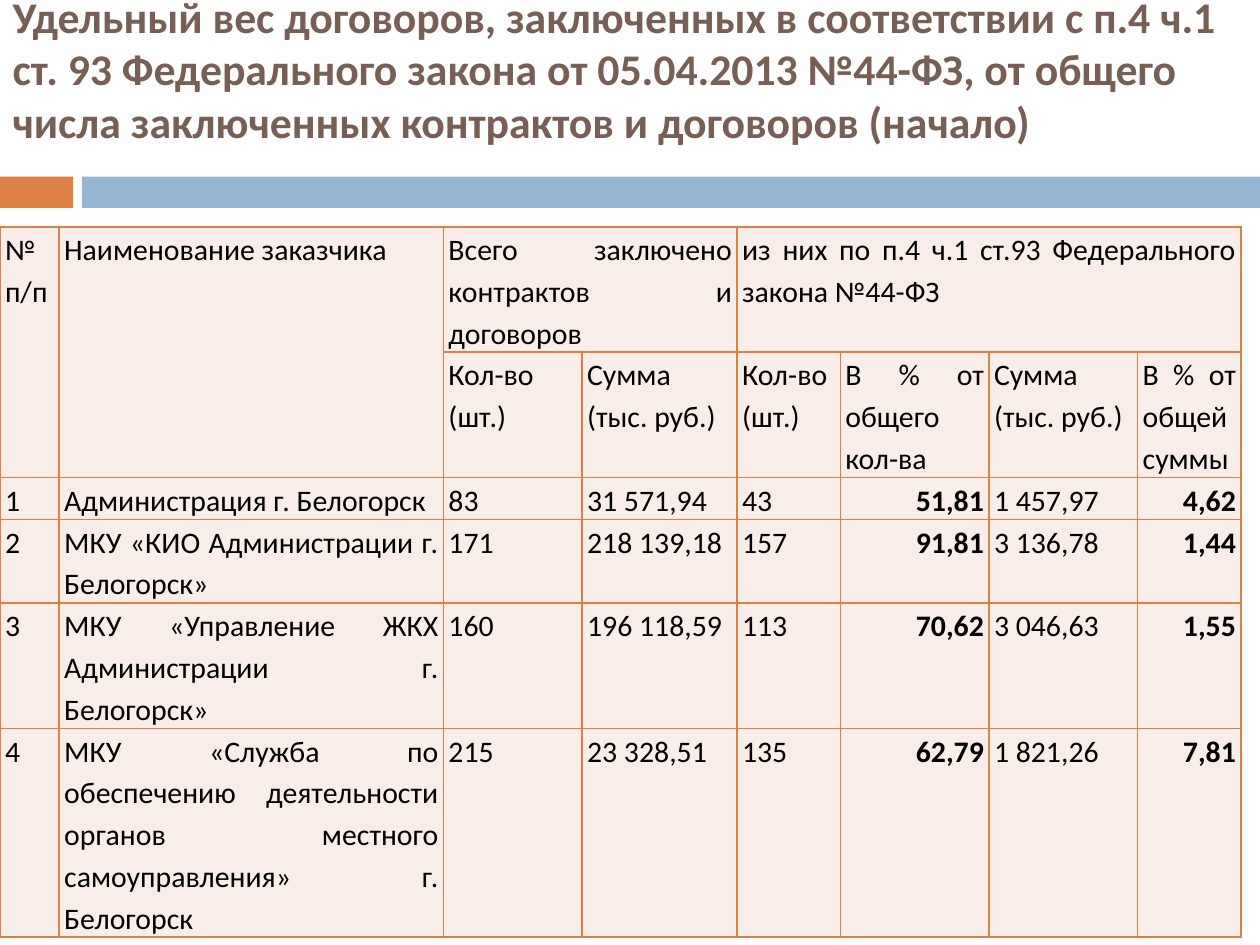
from lxml import etree
from pptx import Presentation
from pptx.dml.color import RGBColor
from pptx.enum.shapes import MSO_SHAPE
from pptx.enum.text import MSO_ANCHOR, MSO_AUTO_SIZE, PP_ALIGN
from pptx.oxml.ns import qn
from pptx.util import Inches, Pt

RECTANGLE = MSO_SHAPE.RECTANGLE
MIDDLE, TOP = MSO_ANCHOR.MIDDLE, MSO_ANCHOR.TOP
NO_AUTOFIT = MSO_AUTO_SIZE.NONE
LEFT, RIGHT, JUSTIFY = PP_ALIGN.LEFT, PP_ALIGN.RIGHT, PP_ALIGN.JUSTIFY

COLORS = {"title": "775F55", "accent": "DD8047", "band": "94B6D2",
          "cell": "F9EDE9", "text": "000000"}
TITLE_ONLY = 5
LINE_HEIGHT = 0.33

TITLE = ("Удельный вес договоров, заключенных в соответствии с п.4 ч.1 ст. 93 "
         "Федерального закона от 05.04.2013 №44-ФЗ, от общего числа "
         "заключенных контрактов и договоров (начало)")
COUNT, AMOUNT = "Кол-во\n(шт.)", "Сумма\n(тыс. руб.)"
ROWS = [
    ["№ п/п", "Наименование заказчика", "Всего заключено контрактов и договоров",
     None, "из них по п.4 ч.1 ст.93 Федерального закона №44-ФЗ", None, None, None],
    [None, None, COUNT, AMOUNT, COUNT, "В % от общего кол-ва", AMOUNT,
     "В % от общей суммы"],
    ["1", "Администрация г. Белогорск", "83", "31\u00a0571,94", "43",
     "51,81", "1\u00a0457,97", "4,62"],
    ["2", "МКУ «КИО Администрации г. Белогорск»", "171", "218\u00a0139,18", "157",
     "91,81", "3\u00a0136,78", "1,44"],
    ["3", "МКУ «Управление ЖКХ Администрации г. Белогорск»", "160",
     "196\u00a0118,59", "113", "70,62", "3\u00a0046,63", "1,55"],
    ["4", "МКУ «Служба по обеспечению деятельности органов местного "
     "самоуправления» г. Белогорск", "215", "23\u00a0328,51", "135",
     "62,79", "1\u00a0821,26", "7,81"],
]
COLUMN_WIDTHS = [0.47, 3.05, 1.1, 1.23, 0.82, 1.18, 1.18, 0.82]
LINES_PER_ROW = [3, 3, 1, 2, 3, 5]
MERGES = [((0, 0), (1, 0)), ((0, 1), (1, 1)), ((0, 2), (0, 3)), ((0, 4), (0, 7))]
HEADER_ROWS = 2
PERCENT_COLUMNS = (5, 7)


class SlideBuilder:
    """Holds the style and the slide; lengths are shares of the slide's size."""

    def __init__(self, presentation, font="Calibri"):
        """Add a title-only slide to the presentation."""
        self.width, self.height = presentation.slide_width, presentation.slide_height
        self.slide = presentation.slides.add_slide(presentation.slide_layouts[TITLE_ONLY])
        self.font = font

    def box(self, left, top, width, height):
        """Turn shares of the slide into lengths."""
        return (int(left * self.width), int(top * self.height),
                int(width * self.width), int(height * self.height))

    def format(self, paragraph, size, color, bold, alignment):
        """Set the font and alignment of a paragraph."""
        paragraph.alignment = alignment
        font = paragraph.font
        font.name, font.size, font.bold = self.font, Pt(size), bold
        font.color.rgb = RGBColor.from_string(COLORS[color])

    def bar(self, left, top, width, height, color):
        """Draw a plain filled rectangle."""
        shape = self.slide.shapes.add_shape(RECTANGLE, *self.box(left, top, width, height))
        shape.shadow.inherit = False
        shape.fill.solid()
        shape.fill.fore_color.rgb = RGBColor.from_string(COLORS[color])
        shape.line.fill.background()

    def title(self, text, left, top, width, height):
        """Place and fill the title placeholder."""
        shape = self.slide.shapes.title
        shape.left, shape.top, shape.width, shape.height = self.box(left, top, width, height)
        frame = shape.text_frame
        frame.text = text
        frame.word_wrap, frame.auto_size = True, NO_AUTOFIT
        frame.vertical_anchor = MIDDLE
        self.format(frame.paragraphs[0], 25, "title", True, LEFT)

    def table(self, rows, left, top, widths, heights, merges):
        """Add the table; widths and heights are in inches."""
        frame = self.slide.shapes.add_table(
            len(rows), len(widths), int(left * self.width), int(top * self.height),
            Inches(sum(widths)), Inches(sum(heights)))
        table = frame.table
        table.first_row = table.horz_banding = False
        for column, width in zip(table.columns, widths):
            column.width = Inches(width)
        for row, height in zip(table.rows, heights):
            row.height = Inches(height)
        for first, last in merges:
            table.cell(*first).merge(table.cell(*last))
        for row_index, row in enumerate(rows):
            for column_index, text in enumerate(row):
                percent = row_index >= HEADER_ROWS and column_index in PERCENT_COLUMNS
                self.cell(table.cell(row_index, column_index), text, percent)

    def cell(self, cell, text, percent):
        """Fill one table cell; percentages are bold and right-aligned."""
        cell.margin_left = cell.margin_right = Inches(0.04)
        cell.margin_top = cell.margin_bottom = 0
        cell.vertical_anchor = TOP
        cell.fill.solid()
        cell.fill.fore_color.rgb = RGBColor.from_string(COLORS["cell"])
        self.borders(cell)
        if text is None:
            return
        cell.text = text
        for paragraph in cell.text_frame.paragraphs:
            self.format(paragraph, 17, "text", percent, RIGHT if percent else JUSTIFY)
            paragraph.line_spacing = 1.15

    def borders(self, cell):
        """Give a cell one-point lines on all four sides."""
        properties = cell._tc.get_or_add_tcPr()
        for index, side in enumerate(("lnL", "lnR", "lnT", "lnB")):
            line = etree.Element(qn(f"a:{side}"), w=str(Pt(1)))
            fill = etree.SubElement(line, qn("a:solidFill"))
            etree.SubElement(fill, qn("a:srgbClr"), val=COLORS["accent"])
            properties.insert(index, line)


def main():
    """Build the slide and save it."""
    presentation = Presentation()
    presentation.slide_width, presentation.slide_height = Inches(10), Inches(7.5)
    builder = SlideBuilder(presentation)
    builder.bar(0, 0.187, 0.058, 0.033, "accent")
    builder.bar(0.065, 0.187, 0.935, 0.033, "band")
    builder.title(TITLE, 0, 0, 1, 0.144)
    builder.table(ROWS, 0, 0.24, COLUMN_WIDTHS,
                  [lines * LINE_HEIGHT for lines in LINES_PER_ROW], MERGES)
    presentation.save("out.pptx")


main()
